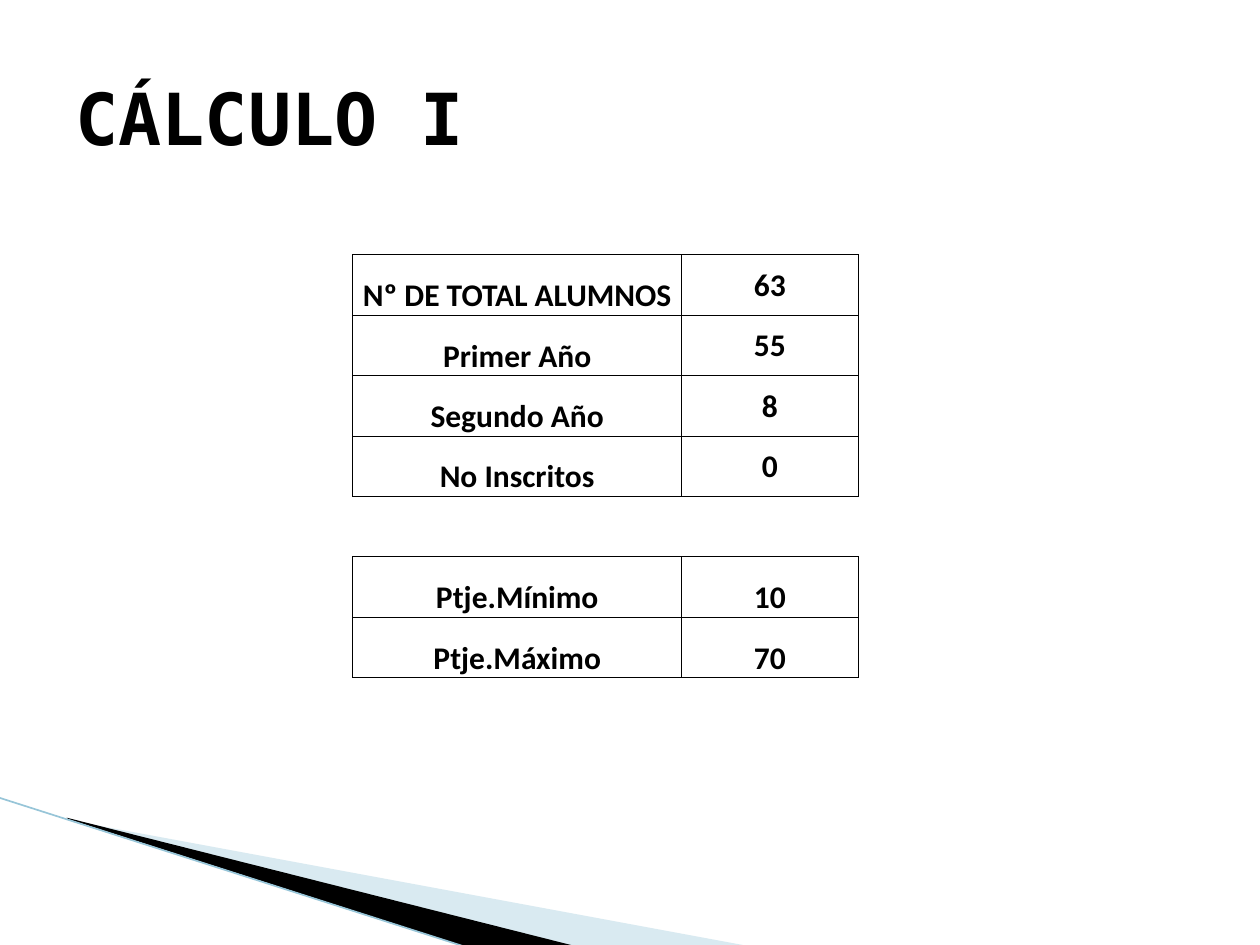
from typing import NamedTuple

from lxml.etree import SubElement
from pptx import Presentation
from pptx.dml.color import RGBColor
from pptx.enum.shapes import MSO_CONNECTOR as Connector
from pptx.enum.text import MSO_ANCHOR as Anchor, PP_ALIGN as Align
from pptx.oxml.ns import qn
from pptx.util import Emu, Pt

EMU_PER_PX = 9144
BLACK = RGBColor(0x00, 0x00, 0x00)
SKY = RGBColor(0xA0, 0xCB, 0xDC)
EDGE = RGBColor(0x97, 0xC5, 0xD8)

TITLE_FONT = {"name": "DejaVu Sans Mono", "size": Pt(41), "bold": True}
CELL_FONT = {"name": "Calibri", "size": Pt(18), "bold": True}
COLUMN_WIDTHS = (261, 140)
ROW_HEIGHT = 48
ALL_SIDES = ("L", "R", "T", "B")


class Wedge(NamedTuple):
    points: tuple
    color: RGBColor
    opacity: int


class Row(NamedTuple):
    label: str = ""
    value: str = ""
    value_anchor: Anchor = Anchor.MIDDLE
    sides: tuple = ALL_SIDES


WEDGES = (
    Wedge(((55, 651), (595, 751), (456, 751), (55, 650)), SKY, 40),
    Wedge(((53, 649), (457, 751), (372, 752), (54, 650)), BLACK, 100),
)
ROWS = (
    Row("Nº DE TOTAL ALUMNOS", "63"),
    Row("Primer Año", "55"),
    Row("Segundo Año", "8"),
    Row("No Inscritos", "0"),
    Row(sides=("T", "B")),
    Row("Ptje.Mínimo", "10", Anchor.BOTTOM),
    Row("Ptje.Máximo", "70", Anchor.BOTTOM),
)


def px(length: int) -> Emu:
    return Emu(length * EMU_PER_PX)


def write(para, text: str, style: dict) -> None:
    span = para.add_run()
    span.text = text
    for name, value in style.items():
        setattr(span.font, name, value)
    span.font.color.rgb = BLACK


def draw_wedge(page, wedge: Wedge) -> None:
    start, *rest = wedge.points
    builder = page.shapes.build_freeform(*start, scale=EMU_PER_PX)
    builder.add_line_segments(rest, close=True)
    shape = builder.convert_to_shape()
    shape.shadow.inherit = False
    shape.line.fill.background()
    shape.fill.solid()
    shape.fill.fore_color.rgb = wedge.color
    if wedge.opacity < 100:
        color = shape.fill._xPr.find(".//" + qn("a:srgbClr"))
        SubElement(color, qn("a:alpha"), val=str(wedge.opacity * 1000))


def draw_edge(page) -> None:
    edge = page.shapes.add_connector(
        Connector.STRAIGHT, px(-1), px(633), px(371), px(752))
    edge.line.color.rgb = EDGE
    edge.line.width = Pt(0.95)
    SubElement(edge._element.spPr, qn("a:effectLst"))


def draw_title(page, text: str) -> None:
    box = page.shapes.add_textbox(px(50), px(30), px(900), px(125))
    frame = box.text_frame
    frame.word_wrap = True
    frame.vertical_anchor = Anchor.MIDDLE
    write(frame.paragraphs[0], text, TITLE_FONT)


def set_borders(cell, sides: tuple) -> None:
    properties = cell._tc.get_or_add_tcPr()
    for side in ALL_SIDES:
        border = SubElement(properties, qn(f"a:ln{side}"), w=str(Pt(0.5)))
        if side in sides:
            fill = SubElement(border, qn("a:solidFill"))
            SubElement(fill, qn("a:srgbClr"), val=str(BLACK))
        else:
            SubElement(border, qn("a:noFill"))


def fill_cell(cell, text: str, anchor: Anchor, sides: tuple) -> None:
    set_borders(cell, sides)
    cell.fill.background()
    layout = {"vertical_anchor": anchor, "margin_left": px(1),
              "margin_right": px(1), "margin_top": px(1), "margin_bottom": 0}
    for name, value in layout.items():
        setattr(cell, name, value)
    para = cell.text_frame.paragraphs[0]
    para.alignment = Align.CENTER
    if text:
        write(para, text, CELL_FONT)


def draw_table(page) -> None:
    table = page.shapes.add_table(
        len(ROWS), len(COLUMN_WIDTHS), px(280), px(202),
        px(sum(COLUMN_WIDTHS)), px(ROW_HEIGHT * len(ROWS))).table
    table.first_row = table.horz_banding = False
    for column, width in zip(table.columns, COLUMN_WIDTHS):
        column.width = px(width)
    for index, row in enumerate(ROWS):
        table.rows[index].height = px(ROW_HEIGHT)
        fill_cell(table.cell(index, 0), row.label, Anchor.BOTTOM, row.sides)
        fill_cell(table.cell(index, 1), row.value, row.value_anchor, row.sides)


def main() -> None:
    deck = Presentation()
    deck.slide_width, deck.slide_height = px(1000), px(750)
    page = deck.slides.add_slide(deck.slide_layouts[6])
    for wedge in WEDGES:
        draw_wedge(page, wedge)
    draw_edge(page)
    draw_title(page, "CÁLCULO I")
    draw_table(page)
    deck.save("out.pptx")


if __name__ == "__main__":
    main()
